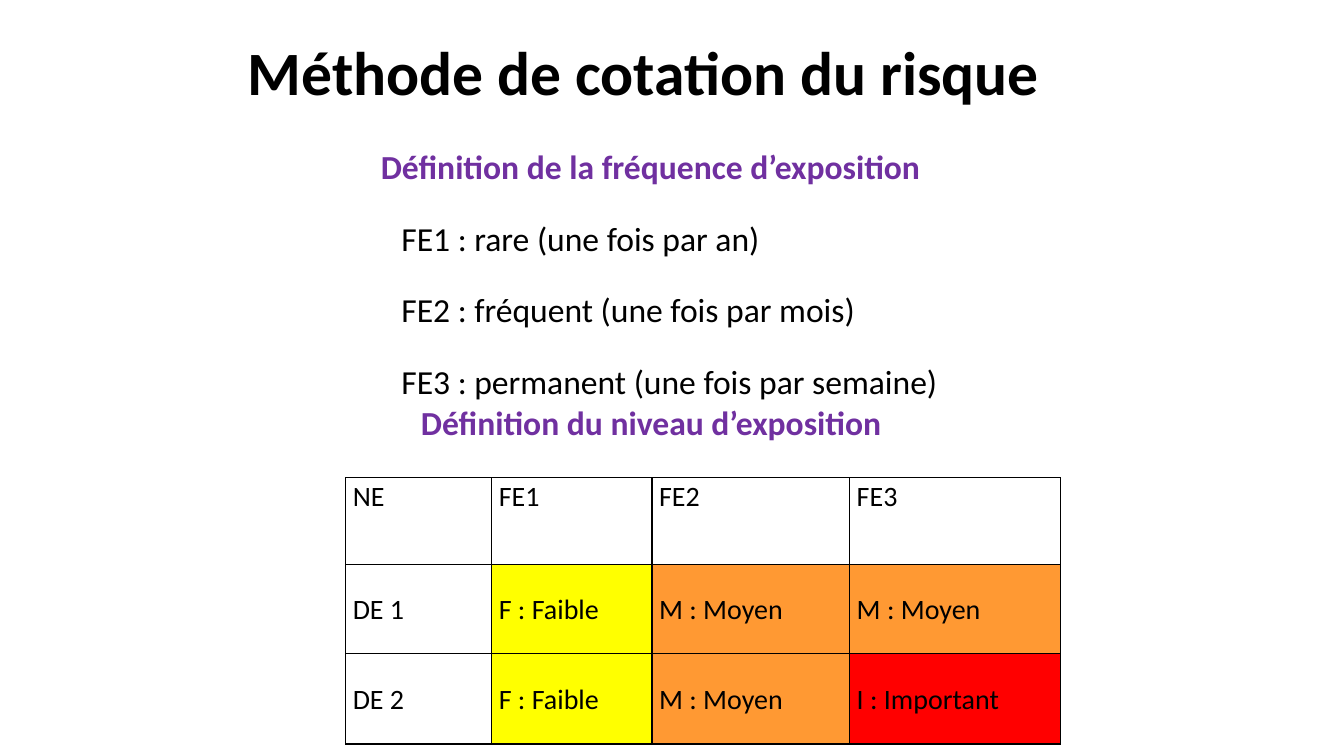
from dataclasses import dataclass

from lxml.etree import SubElement
from pptx import Presentation
from pptx.dml.color import RGBColor
from pptx.enum.text import MSO_ANCHOR, MSO_AUTO_SIZE, PP_ALIGN
from pptx.oxml.ns import qn
from pptx.slide import Slide
from pptx.table import _Cell
from pptx.text.text import TextFrame
from pptx.util import Cm, Pt

COLORS = {
    "text": "000000",
    "heading": "7030A0",
    "border": "000000",
    "Faible": "FFFF00",
    "Moyen": "FF9933",
    "Important": "FF0000",
}
FREQUENCIES = [
    "FE1 : rare (une fois par an)",
    "FE2 : fréquent (une fois par mois)",
    "FE3 : permanent (une fois par semaine)",
]
EXPOSURE_LEVELS = [
    ["NE", "FE1", "FE2", "FE3"],
    ["DE 1", "F : Faible", "M : Moyen", "M : Moyen"],
    ["DE 2", "F : Faible", "M : Moyen", "I : Important"],
]
COLUMN_WIDTHS = [3.68, 4.04, 4.98, 5.31]
ROW_HEIGHTS = [2.18, 2.24, 2.29]


@dataclass(frozen=True)
class Box:
    left: float
    top: float
    width: float
    height: float

    def lengths(self) -> tuple[Cm, Cm, Cm, Cm]:
        return Cm(self.left), Cm(self.top), Cm(self.width), Cm(self.height)


@dataclass(frozen=True)
class Heading:
    text: str
    box: Box


HEADINGS = [
    Heading("Définition de la fréquence d’exposition", Box(9.27, 3.56, 14.25, 1.27)),
    Heading("Définition du niveau d’exposition", Box(10.29, 10.01, 12.24, 1.27)),
]


def write_text(
    frame: TextFrame,
    text: str,
    *,
    size: float,
    color: str = "text",
    bold: bool = False,
    align: PP_ALIGN = PP_ALIGN.LEFT,
    line_spacing: float = 1.0,
    space_after: float = 0,
) -> None:
    frame.text = text
    for paragraph in frame.paragraphs:
        properties = paragraph._p.get_or_add_pPr()
        properties.set("marL", "0")
        properties.set("indent", "0")
        SubElement(properties, qn("a:buNone"))
        paragraph.alignment = align
        paragraph.line_spacing = line_spacing
        paragraph.space_before = Pt(0)
        paragraph.space_after = Pt(space_after)
        for run in paragraph.runs:
            run.font.name = "Calibri"
            run.font.size = Pt(size)
            run.font.bold = bold
            run.font.color.rgb = RGBColor.from_string(COLORS[color])


def place(shape, box: Box) -> None:
    shape.left, shape.top, shape.width, shape.height = box.lengths()


def add_heading(slide: Slide, heading: Heading) -> None:
    frame = slide.shapes.add_textbox(*heading.box.lengths()).text_frame
    frame.word_wrap = False
    frame.auto_size = MSO_AUTO_SIZE.SHAPE_TO_FIT_TEXT
    write_text(frame, heading.text, size=24, color="heading", bold=True, align=PP_ALIGN.CENTER)


def draw_borders(cell: _Cell) -> None:
    properties = cell._tc.get_or_add_tcPr()
    for side in ("L", "R", "T", "B"):
        line = SubElement(properties, qn(f"a:ln{side}"), w=str(Pt(1)))
        fill = SubElement(line, qn("a:solidFill"))
        SubElement(fill, qn("a:srgbClr"), val=COLORS["border"])


def format_cell(cell: _Cell, text: str, anchor: MSO_ANCHOR) -> None:
    write_text(cell.text_frame, text, size=20, line_spacing=1.07, space_after=8)
    cell.vertical_anchor = anchor
    cell.margin_left = cell.margin_right = Cm(0.18)
    cell.margin_top = cell.margin_bottom = Cm(0)
    draw_borders(cell)
    level = text.split(" : ")[-1]
    if level in COLORS:
        cell.fill.solid()
        cell.fill.fore_color.rgb = RGBColor.from_string(COLORS[level])
    else:
        cell.fill.background()


def add_exposure_table(slide: Slide, box: Box) -> None:
    levels = slide.shapes.add_table(
        len(ROW_HEIGHTS), len(COLUMN_WIDTHS), *box.lengths()
    ).table
    levels.first_row = False
    levels.horz_banding = False
    for column, width in zip(levels.columns, COLUMN_WIDTHS):
        column.width = Cm(width)
    for row, height, texts in zip(levels.rows, ROW_HEIGHTS, EXPOSURE_LEVELS):
        row.height = Cm(height)
        anchor = MSO_ANCHOR.TOP if texts[0] == "NE" else MSO_ANCHOR.MIDDLE
        for cell, text in zip(row.cells, texts):
            format_cell(cell, text, anchor)


def main() -> None:
    presentation = Presentation()
    presentation.slide_width = Cm(33.87)
    presentation.slide_height = Cm(19.05)
    slide = presentation.slides.add_slide(presentation.slide_layouts[1])

    title = slide.shapes.title
    place(title, Box(1.8, 0.64, 29.21, 2.54))
    title.text_frame.vertical_anchor = MSO_ANCHOR.MIDDLE
    write_text(
        title.text_frame,
        "Méthode de cotation du risque ",
        size=44,
        bold=True,
        align=PP_ALIGN.CENTER,
        line_spacing=0.9,
    )

    frequencies = slide.placeholders[1]
    place(frequencies, Box(9.86, 4.85, 16.94, 5.44))
    frequencies.text_frame.auto_size = MSO_AUTO_SIZE.SHAPE_TO_FIT_TEXT
    write_text(
        frequencies.text_frame,
        "\n".join(FREQUENCIES),
        size=24,
        line_spacing=1.5,
        space_after=8,
    )

    for heading in HEADINGS:
        add_heading(slide, heading)
    add_exposure_table(slide, Box(8.71, 12.04, sum(COLUMN_WIDTHS), sum(ROW_HEIGHTS)))
    presentation.save("out.pptx")


if __name__ == "__main__":
    main()
